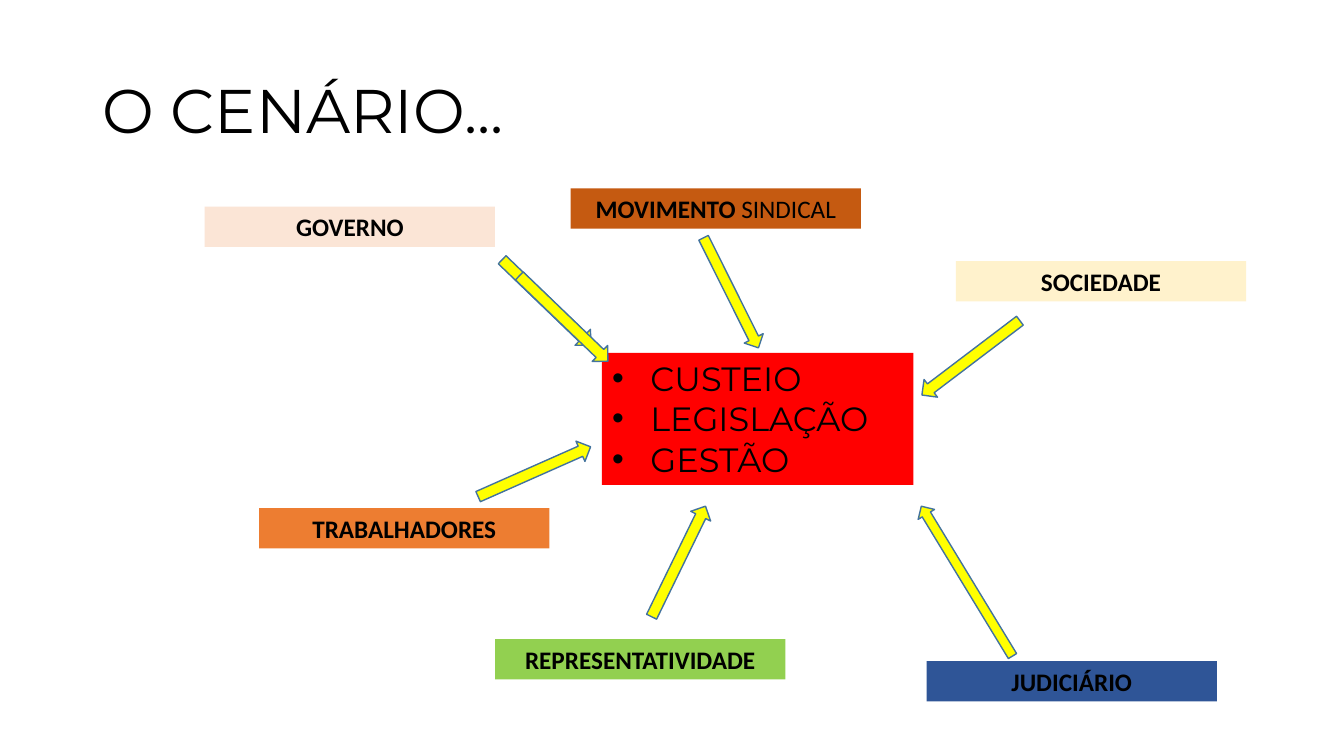
import pptx
import pptx.util
import pptx.dml.color
import pptx.enum.shapes
import pptx.enum.text
from lxml import etree
from pptx.oxml.ns import qn

RGBColor = pptx.dml.color.RGBColor
PX = 9144  # 100 px to the inch

BLACK = RGBColor(0x00, 0x00, 0x00)
RED = RGBColor(0xFF, 0x00, 0x00)
PEACH = RGBColor(0xFB, 0xE5, 0xD6)
ORANGE = RGBColor(0xED, 0x7D, 0x31)
GREEN = RGBColor(0x92, 0xD0, 0x50)
CREAM = RGBColor(0xFF, 0xF2, 0xCC)
BROWN = RGBColor(0xC5, 0x5A, 0x11)
NAVY = RGBColor(0x2F, 0x55, 0x97)
YELLOW = RGBColor(0xFF, 0xFF, 0x00)
STEEL = RGBColor(0x43, 0x73, 0x9E)

ACTOR_WIDTH, ACTOR_HEIGHT = 288, 40
# left, top, colour, bold words, plain words
ACTORS = [
    (203, 205, PEACH, "GOVERNO", ""),
    (257, 504, ORANGE, "TRABALHADORES", ""),
    (491, 634, GREEN, "REPRESENTATIVIDADE", ""),
    (948, 259, CREAM, "SOCIEDADE", ""),
    (566, 187, BROWN, "MOVIMENTO", " SINDICAL"),
    (919, 656, NAVY, "JUDICIÁRIO", ""),
]
# box before turning (left, top, length, thickness), angle
ARROWS = [
    ((481, 289, 122, 22), 43.9),
    ((612, 546, 122, 22), 296),
    ((469, 457, 122, 22), 336.1),
    ((872, 567, 174, 19), 238.7),
    ((664, 280, 122, 21), 63.5),
    ((902, 344, 122, 22), 142.8),
    ((498, 305, 122, 22), 43.9),
]


def emu(box):
    return [pptx.util.Emu(length * PX) for length in box]


def move(placeholder, box):
    placeholder.left, placeholder.top, placeholder.width, placeholder.height = emu(box)


def style(run, font, size, bold=False):
    run.font.name = font
    run.font.size = pptx.util.Pt(size)
    run.font.bold = bold
    run.font.color.rgb = BLACK


def add_box(slide, preset, box, colour):
    shape = slide.shapes.add_shape(preset, *emu(box))
    shape.shadow.inherit = False
    shape.fill.solid()
    shape.fill.fore_color.rgb = colour
    return shape


def set_title(title, box, words):
    move(title, box)
    frame = title.text_frame
    frame.text = words
    frame.auto_size = pptx.enum.text.MSO_AUTO_SIZE.NONE
    frame.vertical_anchor = pptx.enum.text.MSO_ANCHOR.MIDDLE
    heading = frame.paragraphs[0]
    heading.alignment = pptx.enum.text.PP_ALIGN.LEFT
    heading.line_spacing = 0.9
    style(heading.runs[0], "Montserrat", 44)


def set_issues(issues, box, words):
    """Red central list that every actor points to."""
    move(issues, box)
    issues.fill.solid()
    issues.fill.fore_color.rgb = RED
    frame = issues.text_frame
    frame.text = "\n".join(words)
    frame.auto_size = pptx.enum.text.MSO_AUTO_SIZE.NONE
    frame.vertical_anchor = pptx.enum.text.MSO_ANCHOR.TOP
    for issue in frame.paragraphs:
        issue.space_before = pptx.util.Pt(0)
        properties = issue._p.get_or_add_pPr()
        properties.set("marL", str(38 * PX))
        properties.set("indent", str(-38 * PX))
        etree.SubElement(properties, qn("a:buFont")).set("typeface", "Arial")
        etree.SubElement(properties, qn("a:buChar")).set("char", "•")
        style(issue.runs[0], "Montserrat", 24)


def add_actor(slide, box, colour, bold_words, plain_words):
    actor = add_box(slide, pptx.enum.shapes.MSO_SHAPE.RECTANGLE, box, colour)
    actor.line.fill.background()
    frame = actor.text_frame
    frame.word_wrap = True
    frame.vertical_anchor = pptx.enum.text.MSO_ANCHOR.TOP
    label = frame.paragraphs[0]
    label.text = bold_words
    label.alignment = pptx.enum.text.PP_ALIGN.CENTER
    style(label.runs[0], "Calibri", 18, bold=True)
    if plain_words:
        ending = label.add_run()
        ending.text = plain_words
        style(ending, "Calibri", 18)


def add_arrow(slide, box, angle):
    arrow = add_box(slide, pptx.enum.shapes.MSO_SHAPE.RIGHT_ARROW, box, YELLOW)
    arrow.rotation = angle
    arrow.line.color.rgb = STEEL
    arrow.line.width = pptx.util.Pt(1)


def main():
    deck = pptx.Presentation()
    deck.slide_width, deck.slide_height = emu((1333, 750))
    slide = deck.slides.add_slide(deck.slide_layouts[1])

    # Title and central list
    set_title(slide.shapes.title, (92, 40, 520, 145), "O CENÁRIO...")
    set_issues(slide.placeholders[1], (597, 350, 309, 131),
               ["CUSTEIO", "LEGISLAÇÃO", "GESTÃO"])

    # Actors around the list
    for left, top, colour, bold_words, plain_words in ACTORS:
        add_actor(slide, (left, top, ACTOR_WIDTH, ACTOR_HEIGHT),
                  colour, bold_words, plain_words)

    # Arrows towards the list
    for box, angle in ARROWS:
        add_arrow(slide, box, angle)

    deck.save("out.pptx")


if __name__ == "__main__":
    main()
